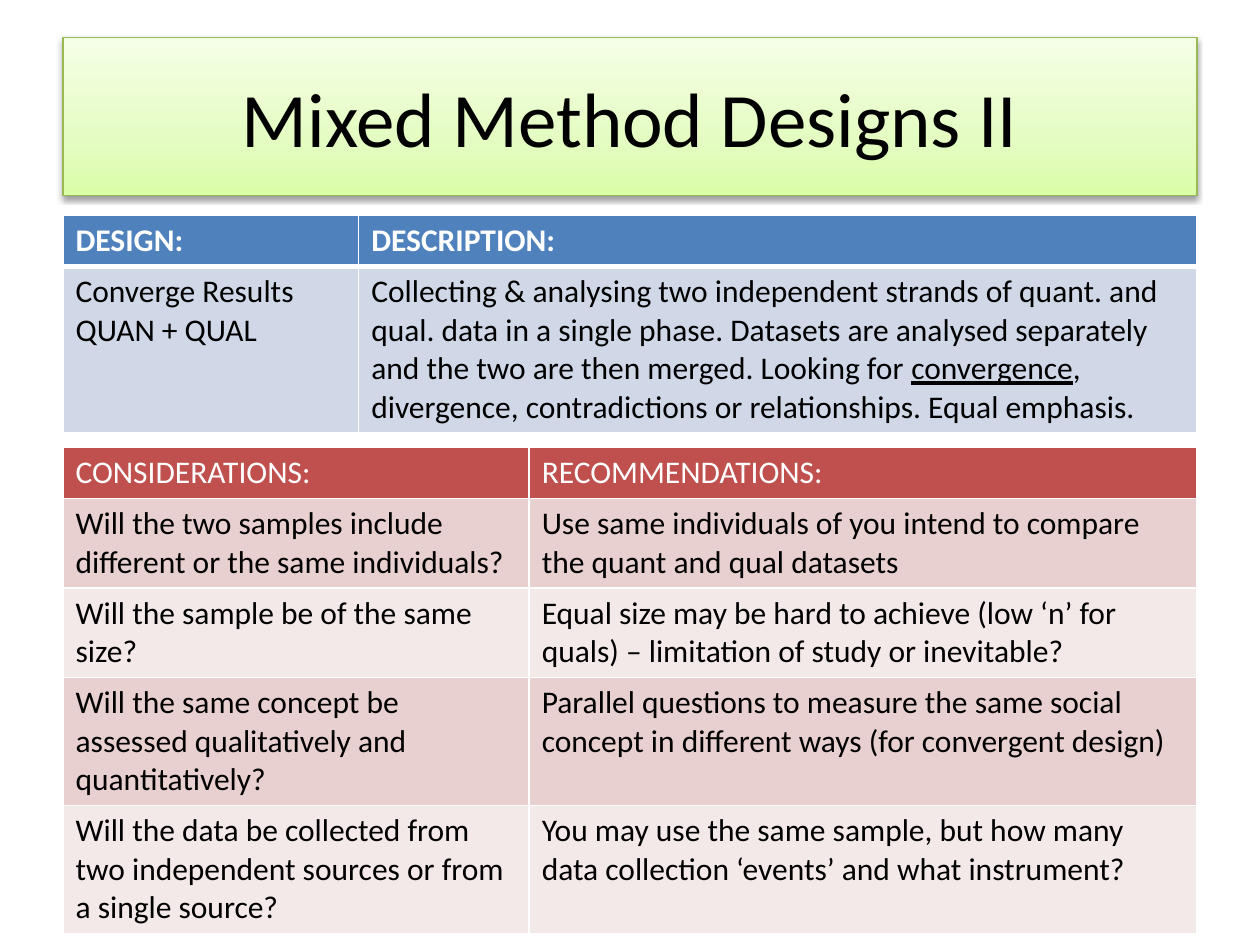
import pptx
import pptx.util
import pptx.dml.color
import pptx.enum.text
import pptx.enum.shapes
import pptx.oxml
import pptx.oxml.ns
from lxml import etree

Pt = pptx.util.Pt
qn = pptx.oxml.ns.qn
FONT = "Calibri"
HUES = {
    "ink": "000000", "white": "FFFFFF", "edge": "98B955",
    "lime": "DAFDA7", "pale": "E4FCC2", "mist": "F5FFE7",
    "blue": "4F81BD", "sky": "D0D8E8",
    "red": "C0504D", "rose": "E8D0D0", "blush": "F4E9E9",
}
DESIGN = [
    ["DESIGN:", "DESCRIPTION:"],
    ["Converge Results\nQUAN + QUAL",
     "Collecting & analysing two independent strands of quant. and qual. data "
     "in a single phase. Datasets are analysed separately and the two are then "
     "merged. Looking for _convergence_, divergence, contradictions or "
     "relationships. Equal emphasis."],
]
ADVICE = [
    ["CONSIDERATIONS:", "RECOMMENDATIONS:"],
    ["Will the two samples include different or the same individuals?",
     "Use same individuals of you intend to compare the quant and qual datasets"],
    ["Will the sample be of the same size?",
     "Equal size may be hard to achieve (low ‘n’ for quals) – limitation of "
     "study or inevitable?"],
    ["Will the same concept be assessed qualitatively and quantitatively?",
     "Parallel questions to measure the same social concept in different ways "
     "(for convergent design)"],
    ["Will the data be collected from two independent sources or from a single "
     "source?",
     "You may use the same sample, but how many data collection ‘events’ and "
     "what instrument?"],
]


def rgb(name):
    """Return the named colour."""
    return pptx.dml.color.RGBColor.from_string(HUES[name])


def style(run, size, hue, bold=False):
    """Set the font of a run."""
    run.font.name, run.font.size, run.font.bold = FONT, Pt(size), bold
    run.font.color.rgb = rgb(hue)


def tint(parent, hue):
    """Add a colour element to an XML parent."""
    return etree.SubElement(parent, qn("a:srgbClr"), val=HUES[hue])


def add_title(slide, box, text):
    """Draw the title banner with its gradient and soft shadow."""
    shape = slide.shapes.add_shape(
        pptx.enum.shapes.MSO_SHAPE.RECTANGLE, *map(Pt, box))
    shape.fill.gradient()
    shape.fill.gradient_angle = 90
    shape.line.color.rgb, shape.line.width = rgb("edge"), Pt(0.75)
    shape.shadow.inherit = False
    props = shape._element.spPr
    stops = props.find(".//" + qn("a:gsLst"))
    for stop in list(stops):
        stops.remove(stop)
    for pos, hue in ((0, "lime"), (35, "pale"), (100, "mist")):
        tint(etree.SubElement(stops, qn("a:gs"), pos=str(pos * 1000)), hue)
    shade = etree.SubElement(
        props.find(qn("a:effectLst")), qn("a:outerShdw"), blurRad=str(Pt(3.1)),
        dist=str(Pt(1.6)), dir="5400000", rotWithShape="0")
    etree.SubElement(tint(shade, "ink"), qn("a:alpha"), val="38000")
    frame = shape.text_frame
    frame.text, frame.word_wrap = text, True
    frame.vertical_anchor = pptx.enum.text.MSO_ANCHOR.MIDDLE
    frame.paragraphs[0].alignment = pptx.enum.text.PP_ALIGN.CENTER
    style(frame.paragraphs[0].runs[0], 44, "ink")


def add_edges(cell, top, base):
    """Give a cell white borders."""
    props = cell._tc.get_or_add_tcPr()
    for side, width in (("L", 1), ("R", 1), ("T", top), ("B", base)):
        line = etree.SubElement(props, qn("a:ln" + side), w=str(Pt(width)))
        tint(etree.SubElement(line, qn("a:solidFill")), "white")


def fill_cell(cell, text, hue, bold):
    """Write the text of a cell, with underscores around underlined words."""
    frame = cell.text_frame
    for i, line in enumerate(text.split("\n")):
        para = frame.add_paragraph() if i else frame.paragraphs[0]
        for j, part in enumerate(line.split("_")):
            run = para.add_run()
            run.text = part
            style(run, 18, hue, bold)
            if j % 2:
                run.font.underline = True


def add_grid(slide, box, rows, cols, highs, head, bands, rule, bold):
    """Draw a table with a header row and banded body rows."""
    grid = slide.shapes.add_table(len(rows), len(cols), *map(Pt, box)).table
    for col, width in zip(grid.columns, cols):
        col.width = Pt(width)
    for r, (texts, high) in enumerate(zip(rows, highs)):
        grid.rows[r].height = Pt(high)
        fill = bands[(r - 1) % len(bands)] if r else head
        for c, text in enumerate(texts):
            cell = grid.cell(r, c)
            add_edges(cell, rule if r == 1 else 1, 1 if r else rule)
            cell.fill.solid()
            cell.fill.fore_color.rgb = rgb(fill)
            fill_cell(cell, text, "ink" if r else "white", bold and not r)


def main():
    """Build and save the slide."""
    deck = pptx.Presentation()
    deck.slide_width, deck.slide_height = Pt(720), Pt(540)
    slide = deck.slides.add_slide(deck.slide_layouts[6])
    left, wide = 36, 648
    add_title(slide, (left, 21.6, wide, 90), "Mixed Method Designs II")
    add_grid(slide, (left, 123.1, wide, 123), DESIGN, (169, 479),
             (29.2, 94), "blue", ["sky"], 3, True)
    add_grid(slide, (left, 255.6, wide, 277), ADVICE, (266.4, 381.6),
             (29.2, 51, 51, 73, 73), "red", ["rose", "blush"], 1, False)
    deck.save("out.pptx")


if __name__ == "__main__":
    main()
